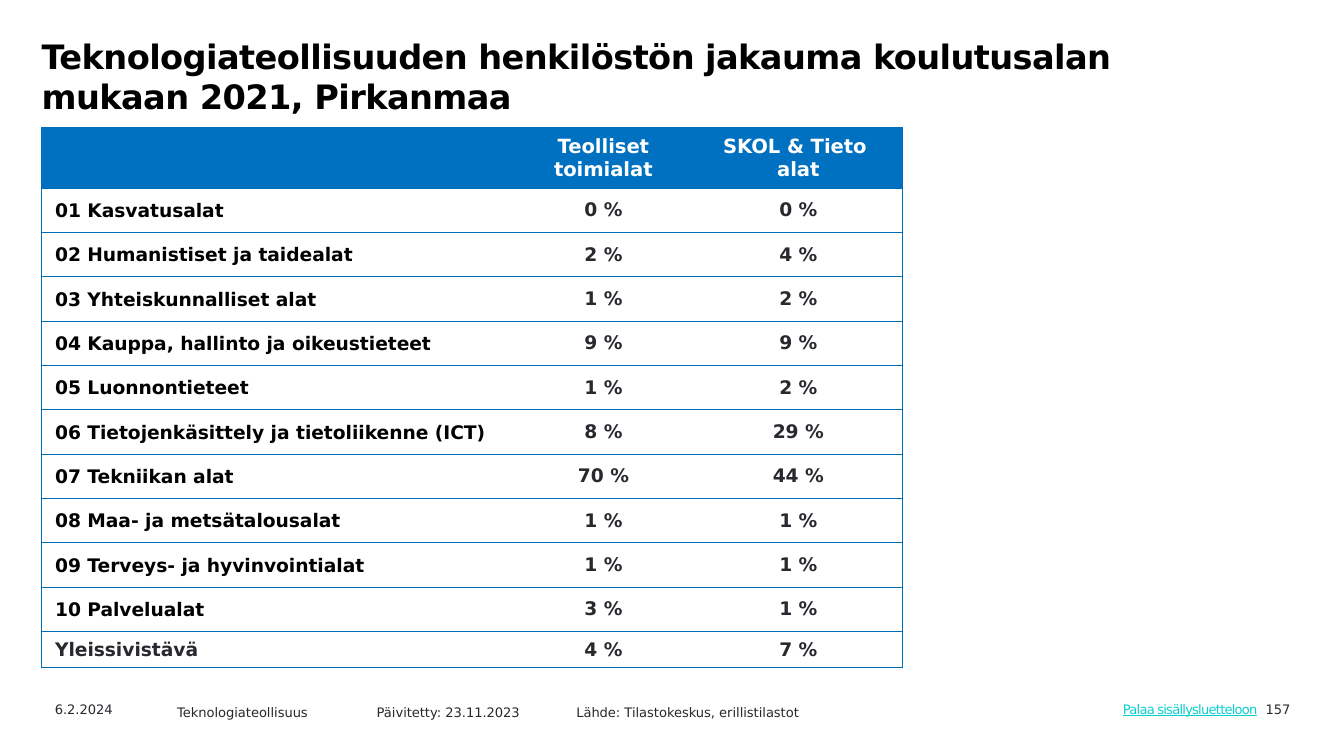
from dataclasses import dataclass
from lxml import etree
from pptx import Presentation
from pptx.dml.color import RGBColor
from pptx.enum.text import MSO_ANCHOR, PP_ALIGN
from pptx.oxml.ns import qn
from pptx.util import Inches, Pt

LEFT, CENTER, RIGHT = PP_ALIGN.LEFT, PP_ALIGN.CENTER, PP_ALIGN.RIGHT
MIDDLE = MSO_ANCHOR.MIDDLE
COLUMNS, ROWS = 100, 56.25
UNIT = Inches(0.1)


@dataclass(frozen=True)
class Theme:
    font: str = "DejaVu Sans"
    title_size: float = 18
    header_size: float = 10.5
    body_size: float = 10
    footer_size: float = 7
    black: str = "000000"
    ink: str = "29282E"
    white: str = "FFFFFF"
    header: str = "0070C0"
    rule: str = "006EBC"
    link: str = "0ACFCF"


THEME = Theme()
HEADINGS = ["", "Teolliset toimialat", "SKOL & Tieto \nalat"]
SHARES = [
    ("01 Kasvatusalat", 0, 0),
    ("02 Humanistiset ja taidealat", 2, 4),
    ("03 Yhteiskunnalliset alat", 1, 2),
    ("04 Kauppa, hallinto ja oikeustieteet", 9, 9),
    ("05 Luonnontieteet", 1, 2),
    ("06 Tietojenkäsittely ja tietoliikenne (ICT)", 8, 29),
    ("07 Tekniikan alat", 70, 44),
    ("08 Maa- ja metsätalousalat", 1, 1),
    ("09 Terveys- ja hyvinvointialat", 1, 1),
    ("10 Palvelualat", 3, 1),
    ("Yleissivistävä", 4, 7),
]
FOOTER = "Teknologiateollisuus\tPäivitetty: 23.11.2023\tLähde: Tilastokeskus, erillistilastot"


def grid(n):
    return round(n * UNIT)


def set_all(target, values):
    for name, value in values.items():
        setattr(target, name, value)


def write(tf, text, size, color, align=LEFT, spacing=0, tabs=(), **font):
    tf.word_wrap = True
    for i, line in enumerate(text.split("\n")):
        p = tf.paragraphs[0] if i == 0 else tf.add_paragraph()
        p.alignment = align
        if tabs:
            stops = etree.SubElement(p._p.get_or_add_pPr(), qn("a:tabLst"))
            for stop in tabs:
                etree.SubElement(stops, qn("a:tab"), pos=str(grid(stop)), algn="l")
        r = p.add_run()
        r.text = line
        set_all(r.font, {"name": THEME.font, "size": Pt(size), **font})
        r.font.color.rgb = RGBColor.from_string(color)
        if spacing:
            r._r.get_or_add_rPr().set("spc", str(round(spacing * 100)))


def add_text(s, box, text, size, color, margins=(1, 0.5), **style):
    tf = s.shapes.add_textbox(*map(grid, box)).text_frame
    x, y = map(grid, margins)
    set_all(tf, {"margin_left": x, "margin_right": x, "margin_top": y, "margin_bottom": y})
    write(tf, text, size, color, **style)


def set_borders(cell, sides):
    tc_pr = cell._tc.get_or_add_tcPr()
    for i, side in enumerate("LRTB"):
        ln = etree.Element(qn(f"a:ln{side}"), w=str(Pt(0.75)))
        if side in sides:
            fill = etree.SubElement(ln, qn("a:solidFill"))
            etree.SubElement(fill, qn("a:srgbClr"), val=THEME.rule)
        else:
            etree.SubElement(ln, qn("a:noFill"))
        tc_pr.insert(i, ln)


def build_title(s, box):
    add_text(s, box, "Teknologiateollisuuden henkilöstön jakauma koulutusalan mukaan 2021, Pirkanmaa",
             THEME.title_size, THEME.black, margins=(1.1, 0.55), spacing=-0.32, bold=True)


def build_table(s, box):
    x, y, width, height = box
    widths = [width - 29, 13.5, 15.5]
    header_height, last_height = 4.5, 2.7
    row_height = (height - header_height - last_height) / (len(SHARES) - 1)
    heights = [header_height] + [row_height] * (len(SHARES) - 1) + [last_height]
    body = [[name] + [f"{value} %" for value in values] for name, *values in SHARES]
    rows = [HEADINGS] + body
    table = s.shapes.add_table(len(rows), len(widths), *map(grid, box)).table
    set_all(table, {"first_row": False, "horz_banding": False})
    for column, w in zip(table.columns, widths):
        column.width = grid(w)
    for row, h in zip(table.rows, heights):
        row.height = grid(h)
    for i, values in enumerate(rows):
        for j, value in enumerate(values):
            cell = table.cell(i, j)
            cell.vertical_anchor = MIDDLE
            is_label = j == 0 and 0 < i < len(rows) - 1
            if is_label:
                set_all(cell, {"margin_top": grid(0.1), "margin_bottom": 0})
            size, color = THEME.body_size, THEME.black if is_label else THEME.ink
            if i == 0:
                size, color = THEME.header_size, THEME.white
                cell.fill.solid()
                cell.fill.fore_color.rgb = RGBColor.from_string(THEME.header)
            else:
                cell.fill.background()
            if value:
                write(cell.text_frame, value, size, color, align=CENTER if j else LEFT, bold=True)
            set_borders(cell, ("LTB", "TB", "RTB")[j])


def build_footer(s, box):
    x, y, width, height = box
    size, ink = THEME.footer_size, THEME.ink
    add_text(s, (x, y, 10, height), "6.2.2024", size, ink)
    add_text(s, (x + 9.1, y + 0.2, 52.3, height), FOOTER, size, ink, tabs=(14.85, 29.7))
    add_text(s, (x + width - 13.85, y + 0.1, 12.2, 2), "Palaa sisällysluetteloon", size, THEME.link,
             margins=(0.4, 0.4), spacing=-0.4, underline=True)
    add_text(s, (x + width - 9.4, y, 9.4, height), "157", size, ink, align=RIGHT)


def main():
    prs = Presentation()
    set_all(prs, {"slide_width": grid(COLUMNS), "slide_height": grid(ROWS)})
    s = prs.slides.add_slide(prs.slide_layouts[6])
    build_title(s, (2, 2.1, 87.9, 5.2))
    build_table(s, (3.1, 9.5, 64.05, 40.2))
    build_footer(s, (3.1, 51.7, 93.9, 1.8))
    prs.save("out.pptx")


if __name__ == "__main__":
    main()
